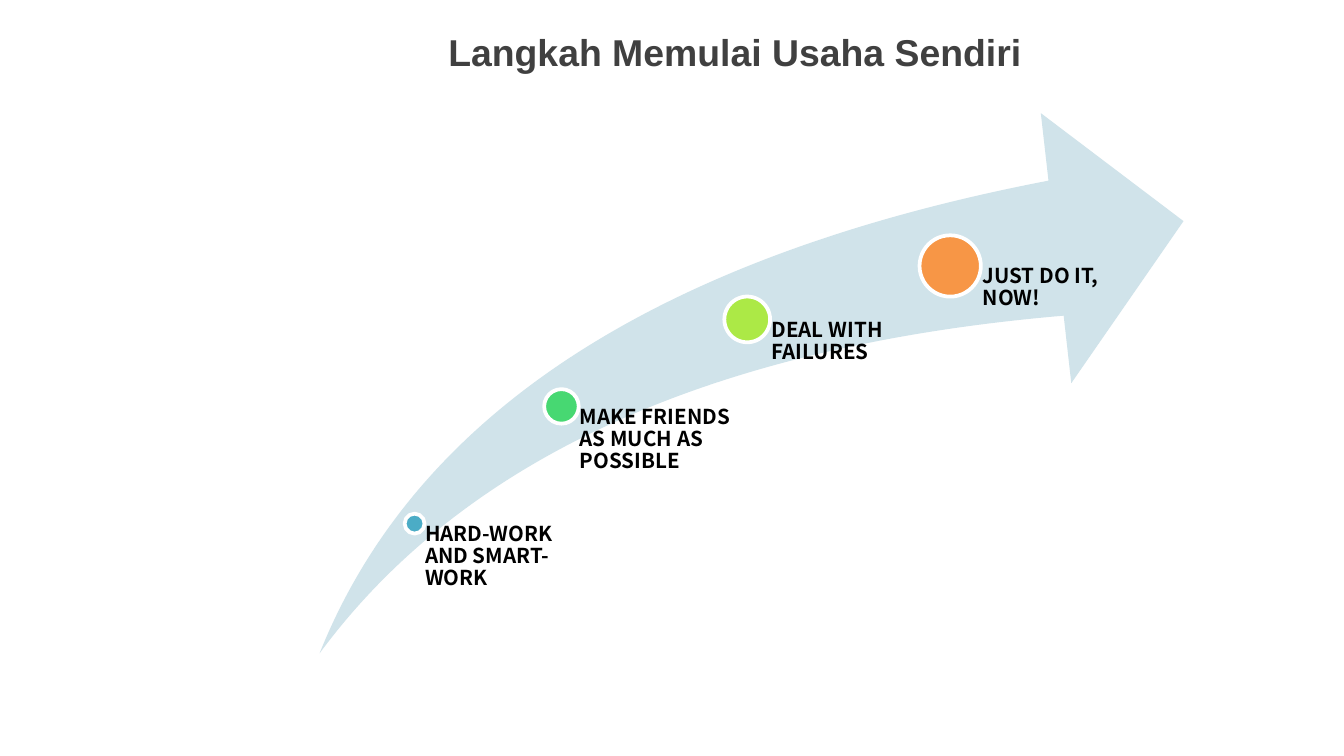
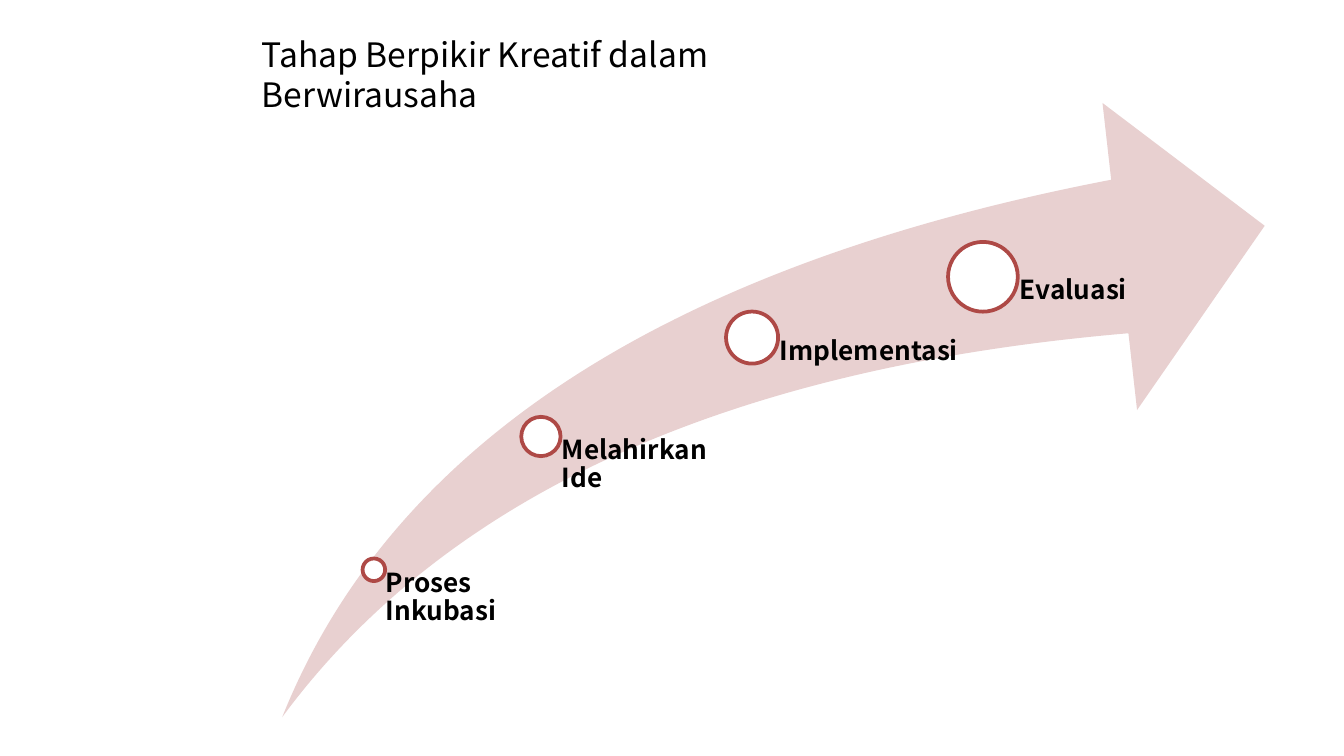
from dataclasses import dataclass

from pptx import Presentation
from pptx.dml.color import RGBColor
from pptx.enum.shapes import MSO_SHAPE
from pptx.enum.text import MSO_ANCHOR, MSO_AUTO_SIZE, PP_ALIGN
from pptx.util import Pt

SWOOSH = MSO_SHAPE.SWOOSH_ARROW
OVAL = MSO_SHAPE.OVAL
TOP, MIDDLE = MSO_ANCHOR.TOP, MSO_ANCHOR.MIDDLE
LEFT, CENTER = PP_ALIGN.LEFT, PP_ALIGN.CENTER
FIT, FIXED = MSO_AUTO_SIZE.SHAPE_TO_FIT_TEXT, MSO_AUTO_SIZE.NONE


@dataclass(frozen=True)
class Theme:
    sans: str = "Arial"
    noto: str = "Noto Sans CJK KR"
    black: str = "000000"
    gray: str = "404040"
    white: str = "FFFFFF"
    blue: str = "D0E3EA"
    pink: str = "E8D0D0"
    red: str = "AE4946"
    dots: tuple = ("4BACC6", "47D872", "ACE946", "F79646")
    head: int = 20
    lead: int = 18
    step: int = 14
    small: int = 11
    rim: int = 2


THEME = Theme()

STOPS = (
    (0.11, 0.76, 0.023, 0.171),
    (0.28, 0.543, 0.04, 0.213),
    (0.495, 0.382, 0.053, 0.213),
    (0.73, 0.283, 0.071, 0.213),
)


def apply(item, form):
    for name, value in form.items():
        setattr(item, name, value)


def add_shape(slide, kind, box, fill, line=None):
    shape = slide.shapes.add_shape(kind, *map(Pt, box))
    shape.shadow.inherit = False
    shape.fill.solid()
    shape.fill.fore_color.rgb = RGBColor.from_string(fill)
    if line:
        shape.line.color.rgb = RGBColor.from_string(line)
        shape.line.width = Pt(THEME.rim)
    else:
        shape.line.fill.background()
    return shape


def add_text(slide, box, text, font, size, color, bold=False, frame=None, para=None):
    body = slide.shapes.add_textbox(*map(Pt, box)).text_frame
    apply(body, {"word_wrap": True, "auto_size": FIXED, "vertical_anchor": TOP} | (frame or {}))
    line = body.paragraphs[0]
    apply(line, {"alignment": LEFT} | (para or {}))
    run = line.add_run()
    run.text = text
    apply(run.font, {"name": font, "size": Pt(size), "bold": bold})
    run.font.color.rgb = RGBColor.from_string(color)


def draw_path(slide, box, fill, steps, dots, rim, size, shift=0):
    left, top, width, height = box
    arrow = add_shape(slide, SWOOSH, box, fill)
    for index in range(2):
        arrow.adjustments[index] = 0.25
    for text, dot, (across, down, scale, span) in zip(steps, dots, STOPS):
        x = left + across * width + shift
        y = top + down * height
        side = scale * width
        add_shape(slide, OVAL, (x - side / 2, y - side / 2, side, side), dot, rim)
        inset = {"margin_left": Pt(0.53 * side), "margin_top": 0,
                 "margin_right": 0, "margin_bottom": 0}
        add_text(slide, (x, y, span * width, top + height - y), text, THEME.noto,
                 size, THEME.black, True, inset, {"line_spacing": 0.9})


def build_start(slide):
    add_text(slide, (121.7, 9.6, 544.3, 36), "Langkah Memulai Usaha Sendiri", THEME.sans,
             THEME.head, THEME.gray, True, {"vertical_anchor": MIDDLE}, {"alignment": CENTER})
    steps = ("HARD-WORK AND SMART-WORK", "MAKE FRIENDS AS MUCH AS POSSIBLE",
             "DEAL WITH FAILURES", "JUST DO IT, NOW!")
    draw_path(slide, (171.2, 60.6, 462.8, 289.4), THEME.blue, steps, THEME.dots,
              THEME.white, THEME.small)


def build_think(slide):
    steps = ("Proses Inkubasi", "Melahirkan Ide", "Implementasi", "Evaluasi")
    draw_path(slide, (151.2, 55.2, 526.3, 329), THEME.pink, steps,
              [THEME.white] * len(steps), THEME.red, THEME.step, -8.8)
    add_text(slide, (133.2, 14.4, 362.2, 29), "Tahap Berpikir Kreatif dalam Berwirausaha",
             THEME.noto, THEME.lead, THEME.black, frame={"auto_size": FIT})


def main():
    deck = Presentation()
    apply(deck, {"slide_width": Pt(720), "slide_height": Pt(405)})
    for build in (build_start, build_think):
        build(deck.slides.add_slide(deck.slide_layouts[6]))
    deck.save("out.pptx")


if __name__ == "__main__":
    main()
